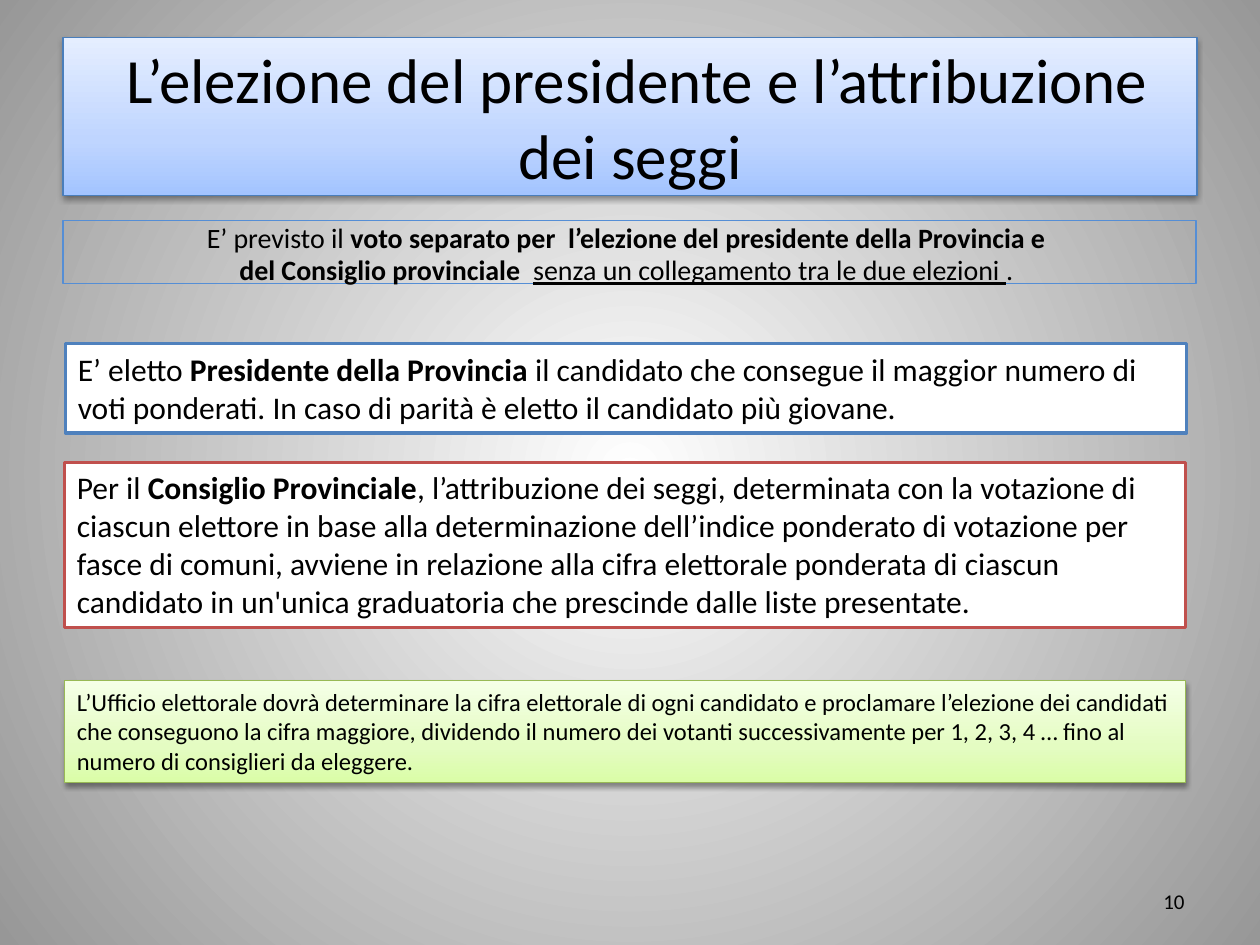
from lxml import etree
from pptx import Presentation
from pptx import util as u
from pptx.dml.color import RGBColor
from pptx.enum import shapes, text
from pptx.oxml import parse_xml
from pptx.oxml.ns import nsdecls, qn

ALIGN = text.PP_ALIGN
ANCHOR = text.MSO_ANCHOR
REGULAR, BOLD, UNDERLINED = {}, {"bold": True}, {"underline": True}


def color(value):
    return RGBColor.from_string(value)


def set_gradient(fill, parent, stops, direction):
    fill.gradient()
    gradient = next(parent.iter(qn("a:gradFill")))
    for child in list(gradient):
        gradient.remove(child)
    stop_list = etree.SubElement(gradient, qn("a:gsLst"))
    for position, value in stops:
        stop = etree.SubElement(stop_list, qn("a:gs"), pos=str(position * 1000))
        etree.SubElement(stop, qn("a:srgbClr"), val=value)
    gradient.append(parse_xml(direction))


def add_shadow(shape):
    effects = shape._element.spPr.find(qn("a:effectLst"))
    effects.append(parse_xml(
        f'<a:outerShdw {nsdecls("a")} blurRad="{u.Pt(3.1)}" dist="{u.Pt(1.6)}" '
        'dir="5400000" rotWithShape="0"><a:srgbClr val="000000">'
        '<a:alpha val="38000"/></a:srgbClr></a:outerShdw>'))


def add_panel(slide, box, fill=None, line=None, width=0.75):
    shape = slide.shapes.add_shape(
        shapes.MSO_SHAPE.RECTANGLE, *(u.Cm(length) for length in box))
    shape.shadow.inherit = False
    if isinstance(fill, list):
        set_gradient(shape.fill, shape._element, fill,
                     f'<a:lin {nsdecls("a")} ang="16200000" scaled="0"/>')
        add_shadow(shape)
    elif fill:
        shape.fill.solid()
        shape.fill.fore_color.rgb = color(fill)
    else:
        shape.fill.background()
    if line:
        shape.line.color.rgb = color(line)
        shape.line.width = u.Pt(width)
    else:
        shape.line.fill.background()
    return shape


def write(shape, paragraphs, size, align=ALIGN.LEFT, anchor=ANCHOR.TOP,
          line_spacing=None, space_before=None):
    frame = shape.text_frame
    frame.word_wrap = True
    frame.vertical_anchor = anchor
    for index, runs in enumerate(paragraphs):
        paragraph = frame.add_paragraph() if index else frame.paragraphs[0]
        paragraph.alignment = align
        paragraph.line_spacing = line_spacing
        paragraph.space_before = space_before
        for words, style in runs:
            run = paragraph.add_run()
            run.text = words
            run.font.name = "Calibri"
            run.font.size = u.Pt(size)
            run.font.color.rgb = color("000000")
            run.font.bold = style.get("bold", False)
            run.font.underline = style.get("underline", False)


def add_background(slide):
    set_gradient(
        slide.background.fill, slide._element, [(0, "FFFFFF"), (100, "979797")],
        f'<a:path {nsdecls("a")} path="circle">'
        '<a:fillToRect l="50000" t="50000" r="50000" b="50000"/></a:path>')


def add_title(slide, box):
    blue = [(0, "A3C4FF"), (35, "BFD5FF"), (100, "E5EEFF")]
    write(add_panel(slide, box, blue, "4A7EBB"),
          [[(" L’elezione del presidente e l’attribuzione dei seggi", REGULAR)]],
          36, ALIGN.CENTER, ANCHOR.MIDDLE)


def add_premise(slide, box):
    write(add_panel(slide, box, line="558ED5"), [
        [("E’ previsto il ", REGULAR),
         ("voto separato per  l’elezione del presidente della Provincia e ", BOLD)],
        [("del Consiglio provinciale  ", BOLD),
         ("senza un collegamento tra le due elezioni ", UNDERLINED),
         (". ", REGULAR)],
    ], 16, ALIGN.CENTER, line_spacing=0.8, space_before=u.Pt(3.2))


def add_rule(slide, box, line, runs):
    write(add_panel(slide, box, "FFFFFF", line, 2), [runs], 18)


def add_office_note(slide, box):
    green = [(0, "DAFDA7"), (35, "E4FCC2"), (100, "F5FFE7")]
    write(add_panel(slide, box, green, "98B955"), [[
        ("L’Ufficio elettorale dovrà determinare la cifra elettorale di ogni "
         "candidato e proclamare l’elezione dei candidati che conseguono la cifra "
         "maggiore, dividendo il numero dei votanti successivamente per "
         "1, 2, 3, 4 … fino al numero di consiglieri da eleggere.", REGULAR)]], 14)


def add_page_number(slide, box):
    number = slide.shapes.add_textbox(*(u.Cm(length) for length in box))
    write(number, [[("10", REGULAR)]], 12, ALIGN.RIGHT, ANCHOR.MIDDLE)


def main():
    presentation = Presentation()
    presentation.slide_width, presentation.slide_height = u.Cm(25.4), u.Cm(19.05)
    slide = presentation.slides.add_slide(presentation.slide_layouts[6])
    add_background(slide)
    add_premise(slide, (1.27, 4.45, 22.84, 1.27))
    add_title(slide, (1.27, 0.76, 22.86, 3.18))
    add_rule(slide, (1.32, 6.93, 22.6, 1.8), "4F81BD", [
        ("E’ eletto ", REGULAR),
        ("Presidente della Provincia ", BOLD),
        ("il candidato che consegue il maggior numero di voti ponderati. "
         "In caso di parità è eletto il candidato più giovane.", REGULAR)])
    add_rule(slide, (1.3, 9.32, 22.6, 3.33), "C0504D", [
        ("Per il ", REGULAR),
        ("Consiglio Provinciale", BOLD),
        (", l’attribuzione dei seggi, determinata con la votazione di ciascun "
         "elettore in base alla determinazione dell’indice ponderato di votazione "
         "per fasce di comuni, avviene in relazione alla cifra elettorale ponderata "
         "di ciascun candidato in un'unica graduatoria che prescinde dalle liste "
         "presentate.", REGULAR)])
    add_office_note(slide, (1.3, 13.72, 22.6, 2.06))
    add_page_number(slide, (18.21, 17.65, 5.92, 1.02))
    presentation.save("out.pptx")


if __name__ == "__main__":
    main()
